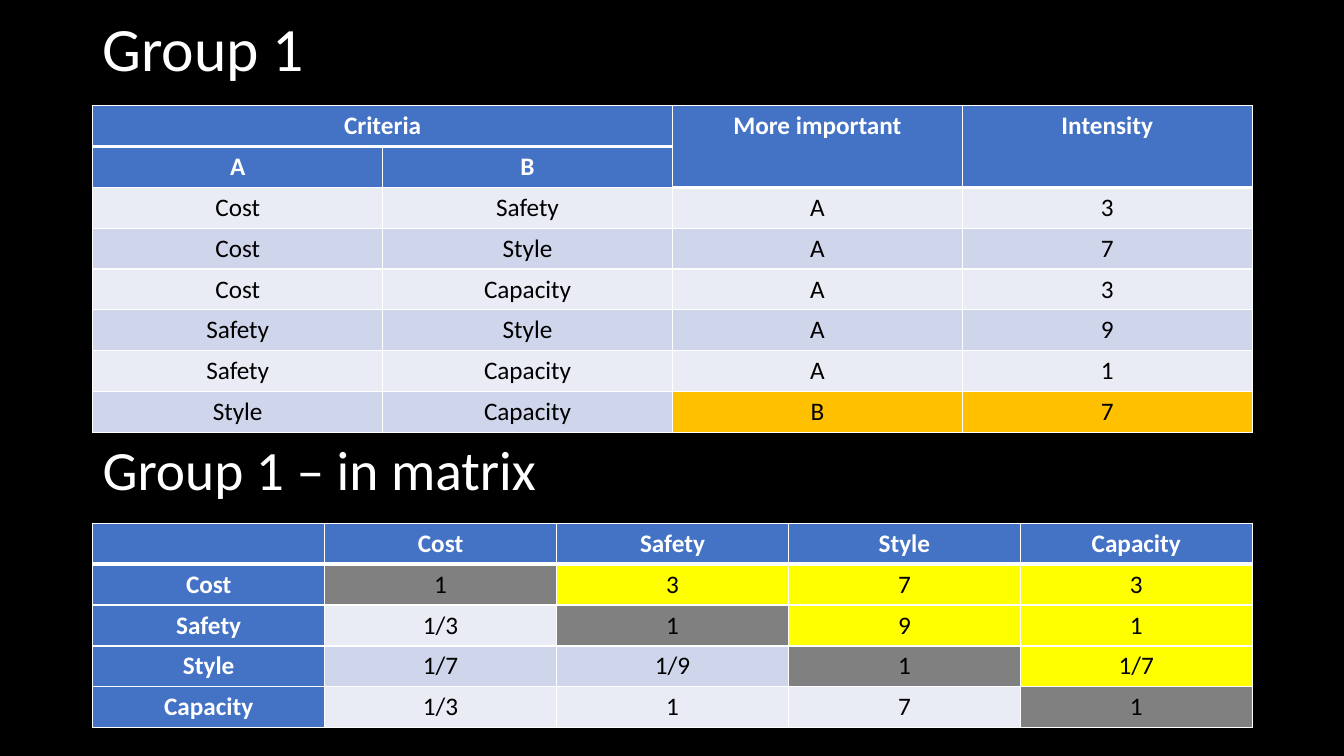
from dataclasses import dataclass

from lxml.etree import SubElement
from pptx import Presentation
from pptx.dml.color import RGBColor
from pptx.enum.text import MSO_ANCHOR as Anchor, PP_ALIGN as Align
from pptx.oxml.ns import qn
from pptx.slide import Slide
from pptx.table import _Cell as Cell
from pptx.util import Inches, Pt

COLORS = {
    "background": "000000",
    "white": "FFFFFF",
    "black": "000000",
    "header": "4472C4",
    "light band": "E9EBF5",
    "dark band": "CFD5EA",
    "reversed": "FFC000",
    "diagonal": "808080",
    "judged": "FFFF00",
}
FONT = "Calibri"
LEFT, WIDTH = 0.92, 11.5


@dataclass(frozen=True)
class Heading:
    text: str
    top: float
    height: float
    size: float
    line_spacing: float


@dataclass(frozen=True)
class Comparison:
    top: float
    height: float
    rows: list[list[str]]
    fills: list[list[str]]
    merges: list[tuple[int, int, int, int]]
    thick_below: set[tuple[int, int]]


def color(name: str) -> RGBColor:
    return RGBColor.from_string(COLORS[name])


def band(row: int) -> str:
    return "dark band" if row % 2 else "light band"


def pairwise_fill(row: int, col: int) -> str:
    if row < 2:
        return "header"
    return "reversed" if row == 7 and col > 1 else band(row)


def matrix_fill(row: int, col: int) -> str:
    if row == 0 or col == 0:
        return "header"
    if row == col:
        return "diagonal"
    return "judged" if col > row else band(row)


def add_heading(slide: Slide, heading: Heading) -> None:
    box = slide.shapes.add_textbox(
        Inches(LEFT), Inches(heading.top), Inches(WIDTH), Inches(heading.height))
    frame = box.text_frame
    frame.word_wrap = True
    frame.vertical_anchor = Anchor.MIDDLE
    paragraph = frame.paragraphs[0]
    paragraph.line_spacing = heading.line_spacing
    run = paragraph.add_run()
    run.text = heading.text
    run.font.name = FONT
    run.font.size = Pt(heading.size)
    run.font.color.rgb = color("white")


def add_border(cell: Cell, side: str, points: float) -> None:
    properties = cell._tc.get_or_add_tcPr()
    line = SubElement(properties, qn(f"a:ln{side}"), w=str(Pt(points)))
    fill = SubElement(line, qn("a:solidFill"))
    SubElement(fill, qn("a:srgbClr"), val=COLORS["white"])


def fill_cell(cell: Cell, text: str, fill: str) -> None:
    cell.fill.solid()
    cell.fill.fore_color.rgb = color(fill)
    if not text:
        return
    is_header = fill == "header"
    paragraph = cell.text_frame.paragraphs[0]
    paragraph.alignment = Align.CENTER
    run = paragraph.add_run()
    run.text = text
    run.font.name = FONT
    run.font.size = Pt(18)
    run.font.bold = is_header
    run.font.color.rgb = color("white" if is_header else "black")


def add_comparison(slide: Slide, comparison: Comparison) -> None:
    row_count, col_count = len(comparison.rows), len(comparison.rows[0])
    table = slide.shapes.add_table(
        row_count, col_count, Inches(LEFT), Inches(comparison.top),
        Inches(WIDTH), Inches(comparison.height)).table
    table.first_row = False
    table.horz_banding = False
    for first_row, first_col, last_row, last_col in comparison.merges:
        table.cell(first_row, first_col).merge(table.cell(last_row, last_col))
    for row, texts in enumerate(comparison.rows):
        for col, text in enumerate(texts):
            cell = table.cell(row, col)
            if col == 0:
                add_border(cell, "L", 1)
            add_border(cell, "R", 1)
            if row == 0:
                add_border(cell, "T", 1)
            add_border(cell, "B", 3 if (row, col) in comparison.thick_below else 1)
            fill_cell(cell, text, comparison.fills[row][col])


PAIRWISE_ROWS = [
    ["Criteria", "", "More important", "Intensity"],
    ["A", "B", "", ""],
    ["Cost", "Safety", "A", "3"],
    ["Cost", "Style", "A", "7"],
    ["Cost", "Capacity", "A", "3"],
    ["Safety", "Style", "A", "9"],
    ["Safety", "Capacity", "A", "1"],
    ["Style", "Capacity", "B", "7"],
]
MATRIX_ROWS = [
    ["", "Cost", "Safety", "Style", "Capacity"],
    ["Cost", "1", "3", "7", "3"],
    ["Safety", "1/3", "1", "9", "1"],
    ["Style", "1/7", "1/9", "1", "1/7"],
    ["Capacity", "1/3", "1", "7", "1"],
]
HEADINGS = [
    Heading("Group 1", 0.08, 0.86, 44, 0.9),
    Heading("Group 1 – in matrix", 4.37, 0.67, 39.6, 0.8),
]
COMPARISONS = [
    Comparison(
        1.05, 3.24, PAIRWISE_ROWS,
        [[pairwise_fill(row, col) for col in range(4)] for row in range(8)],
        [(0, 0, 0, 1), (0, 2, 1, 2), (0, 3, 1, 3)],
        {(0, 0), (0, 1), (0, 2), (0, 3), (1, 2), (1, 3)}),
    Comparison(
        5.19, 2.03, MATRIX_ROWS,
        [[matrix_fill(row, col) for col in range(5)] for row in range(5)],
        [], {(0, col) for col in range(5)}),
]


def main() -> None:
    deck = Presentation()
    deck.slide_width, deck.slide_height = Inches(13.33), Inches(7.5)
    slide = deck.slides.add_slide(deck.slide_layouts[6])
    slide.background.fill.solid()
    slide.background.fill.fore_color.rgb = color("background")
    for heading, comparison in zip(HEADINGS, COMPARISONS):
        add_heading(slide, heading)
        add_comparison(slide, comparison)
    deck.save("out.pptx")


if __name__ == "__main__":
    main()
